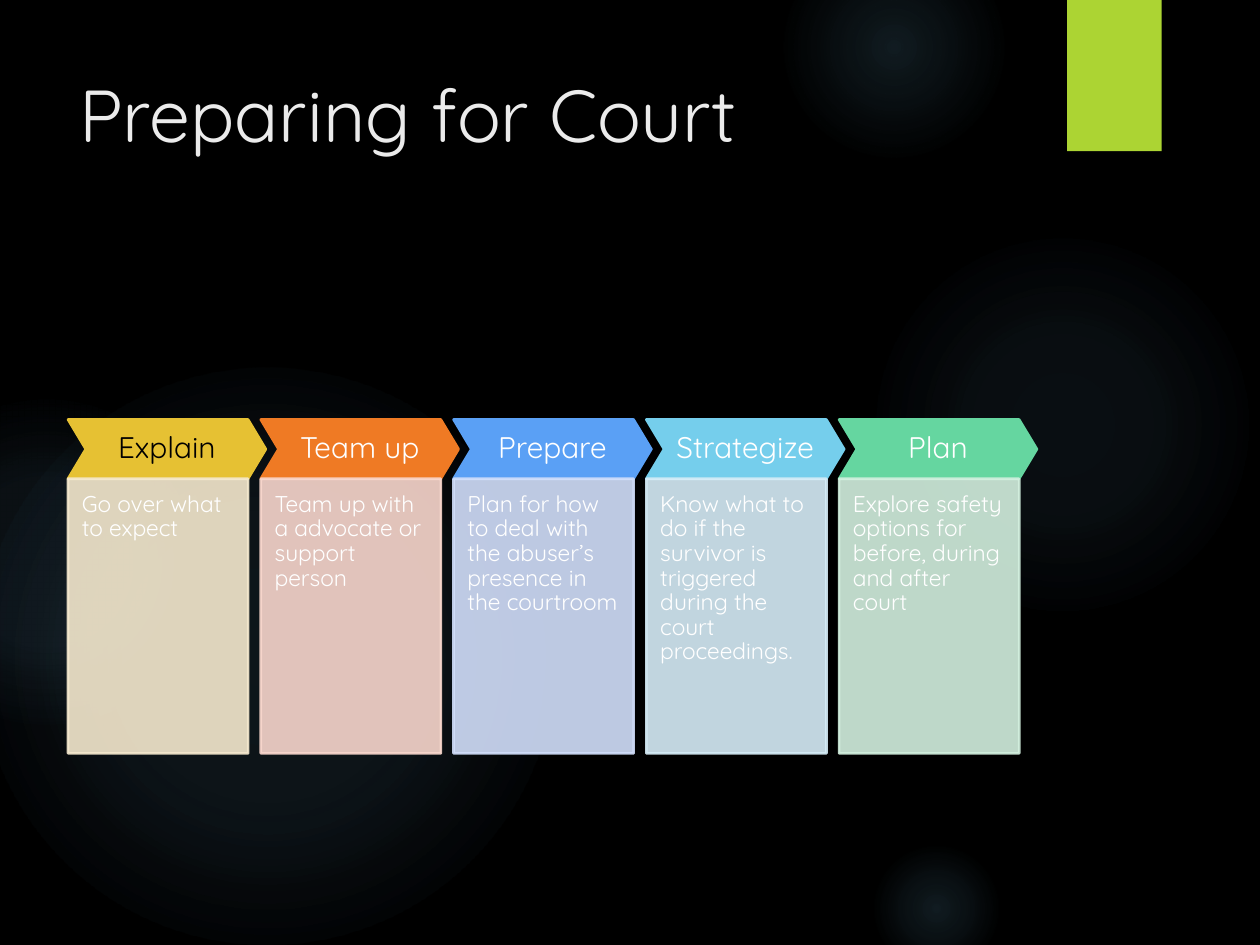
from lxml import etree
from pptx import Presentation
from pptx import util as u
from pptx.dml.color import RGBColor
from pptx.enum import shapes, text
from pptx.oxml import parse_xml
from pptx.oxml.ns import nsdecls, qn

WIDTH, HEIGHT = u.Inches(10), u.Inches(7.5)
FONT = "Quicksand"
GLOW = "7AC4F0"


def paint(fill, color, opacity=100):
    """Give a fill one solid colour, with an opacity in percent."""
    fill.solid()
    fill.fore_color.rgb = RGBColor.from_string(color)
    if opacity < 100:
        color_node = next(fill._xPr.iter(qn("a:srgbClr")))
        etree.SubElement(color_node, qn("a:alpha")).set("val", str(opacity * 1000))


def write(shape, words, size, color, frame_format, paragraph_format):
    frame = shape.text_frame
    frame.word_wrap = True
    for name, value in frame_format.items():
        setattr(frame, name, value)
    paragraph = frame.paragraphs[0]
    for name, value in paragraph_format.items():
        setattr(paragraph, name, value)
    run = paragraph.add_run()
    run.text = words
    run.font.name = FONT
    run.font.size = u.Pt(size)
    paint(run.font.fill, color)


presentation = Presentation()
presentation.slide_width, presentation.slide_height = WIDTH, HEIGHT
slide = presentation.slides.add_slide(presentation.slide_layouts[6])
paint(slide.background.fill, "000000")

# Soft glows: left, top, diameter in inches, then (position, opacity) stops in percent
glows = [
    (6.89, 1.83, 3.08, [(0, 7), (36, 6), (69, 0)]),
    (6.22, -0.5, 1.75, [(0, 14), (36, 7), (73, 0)]),
    (6.89, 6.67, 1.08, [(0, 14), (36, 7), (66, 0)]),
    (-0.17, 2.92, 4.58, [(0, 11), (36, 10), (75, 0)]),
    (-0.92, 3.17, 2.58, [(0, 8), (36, 8), (72, 0)]),
]
for left, top, diameter, stops in glows:
    glow = slide.shapes.add_shape(
        shapes.MSO_SHAPE.OVAL, *map(u.Inches, (left, top, diameter, diameter)))
    glow.shadow.inherit = False
    glow.line.fill.background()
    stop_xml = "".join(
        f'<a:gs pos="{position * 1000}"><a:srgbClr val="{GLOW}">'
        f'<a:alpha val="{opacity * 1000}"/></a:srgbClr></a:gs>'
        for position, opacity in stops)
    gradient = parse_xml(
        f'<a:gradFill {nsdecls("a")}><a:gsLst>{stop_xml}</a:gsLst><a:path path="circle">'
        '<a:fillToRect l="50000" t="50000" r="50000" b="50000"/></a:path></a:gradFill>')
    glow._element.spPr.find(qn("a:prstGeom")).addnext(gradient)

tab = slide.shapes.add_shape(
    shapes.MSO_SHAPE.RECTANGLE, int(WIDTH * 0.847), 0, int(WIDTH * 0.075), int(HEIGHT * 0.16))
tab.shadow.inherit = False
tab.line.fill.background()
paint(tab.fill, "ACD433")

title = slide.shapes.add_textbox(*map(u.Inches, (0.53, 0.5, 7.71, 1.53)))
write(title, "Preparing for Court", 42, "EBEBEB",
      {"vertical_anchor": text.MSO_ANCHOR.TOP}, {})

# Step columns: a chevron heading over a pale panel
LEFT, PITCH = u.Inches(0.54), u.Inches(1.53)
HEAD_TOP, HEAD_WIDTH, HEAD_HEIGHT = u.Inches(3.33), u.Inches(1.57), u.Inches(0.47)
PANEL_WIDTH, PANEL_HEIGHT = u.Inches(1.43), u.Inches(2.18)

head_frame = {"vertical_anchor": text.MSO_ANCHOR.MIDDLE}
head_frame.update({f"margin_{side}": u.Inches(0.06)
                   for side in ("left", "top", "right", "bottom")})
panel_frame = {"vertical_anchor": text.MSO_ANCHOR.TOP, "margin_bottom": u.Inches(0.23)}
panel_frame.update({f"margin_{side}": u.Inches(0.11) for side in ("left", "top", "right")})
head_paragraph = {"alignment": text.PP_ALIGN.CENTER, "line_spacing": 0.9}
panel_paragraph = {"alignment": text.PP_ALIGN.LEFT, "line_spacing": 0.9}

steps = [
    ("Explain", "Go over what to expect", "E6C133", "F5E9CE", "010000"),
    ("Team up", "Team up with a advocate or support person", "EF7A24", "F9D7CD", "FFFFFF"),
    ("Prepare", "Plan for how to deal with the abuser’s presence in the courtroom",
     "5AA0F5", "D2DFFB", "FFFFFF"),
    ("Strategize", "Know what to do if the survivor is triggered during the court proceedings.",
     "75CEEC", "D6EDF8", "FFFFFF"),
    ("Plan", "Explore safety options for before, during and after court",
     "65D6A0", "D3F0DF", "FFFFFF"),
]
for column, (heading, detail, strong, pale, heading_color) in enumerate(steps):
    left = LEFT + column * PITCH
    chevron = slide.shapes.add_shape(
        shapes.MSO_SHAPE.CHEVRON, left, HEAD_TOP, HEAD_WIDTH, HEAD_HEIGHT)
    chevron.adjustments[0] = 0.3
    panel = slide.shapes.add_shape(
        shapes.MSO_SHAPE.RECTANGLE, left, HEAD_TOP + HEAD_HEIGHT, PANEL_WIDTH, PANEL_HEIGHT)
    for shape, color, opacity in ((chevron, strong, 100), (panel, pale, 90)):
        shape.shadow.inherit = False
        paint(shape.fill, color, opacity)
        paint(shape.line.fill, color, opacity)
        shape.line.width = u.Pt(1.5)
    write(chevron, heading, 17, heading_color, head_frame, head_paragraph)
    write(panel, detail, 13, "FFFFFF", panel_frame, panel_paragraph)

presentation.save("out.pptx")
